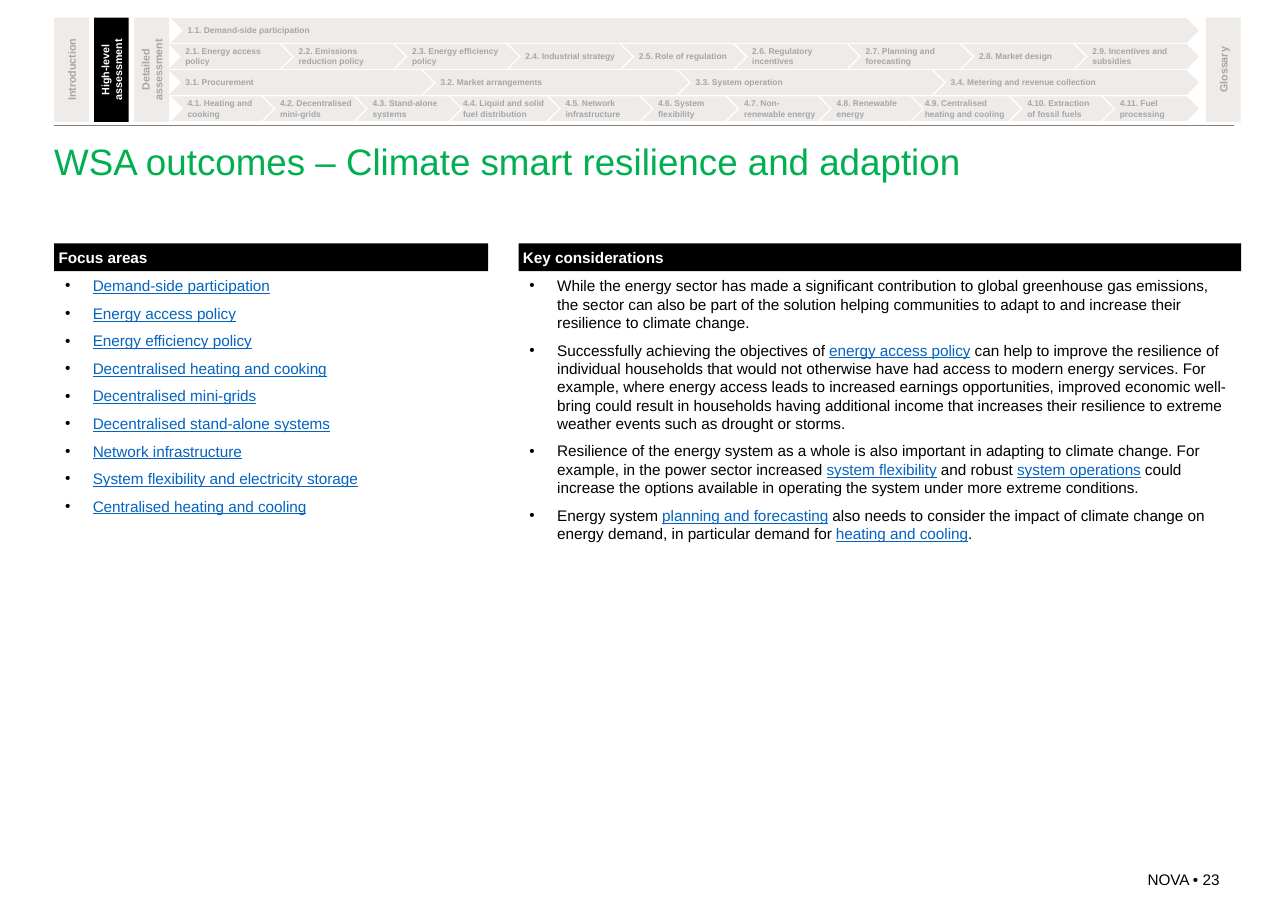
from lxml import etree
from pptx import Presentation
from pptx import util as u
from pptx.dml.color import RGBColor
from pptx.enum import shapes, text
from pptx.oxml import ns

HUES = {"pale": "EEEBE8", "grey": "A6A6A6", "rule": "808080", "black": "000000",
        "white": "FFFFFF", "green": "00B050", "link": "0563C1"}
FONT = "Arial"

# Each step: label, relative width, left and right inset in cm
def step(label, width=1, left=0.1, right=0.1):
    return label, width, left, right


# Each row: left edge in cm, steps
ROWS = [
    (3.94, [step("1.1. Demand-side participation")]),
    (3.89, [step(t) for t in (
        "2.1. Energy access policy", "2.2. Emissions reduction policy",
        "2.3. Energy efficiency policy", "2.4. Industrial strategy",
        "2.5. Role of regulation", "2.6. Regulatory incentives",
        "2.7. Planning and forecasting", "2.8. Market design",
        "2.9. Incentives and subsidies")]),
    (3.89, [step(t) for t in (
        "3.1. Procurement", "3.2. Market arrangements",
        "3.3. System operation", "3.4. Metering and revenue collection")]),
    (3.94, [
        step("4.1. Heating and cooking", 0.93),
        step("4.2. Decentralised mini-grids", 0.93, right=0),
        step("4.3. Stand-alone systems", 0.95),
        step("4.4. Liquid and solid fuel distribution", 0.98, 0, 0),
        step("4.5. Network infrastructure", 0.93),
        step("4.6. System flexibility", 0.87),
        step("4.7. Non-renewable energy", 0.93, right=0),
        step("4.8. Renewable energy", 0.93),
        step("4.9. Centralised heating and cooling", 0.98, 0, 0),
        step("4.10. Extraction of fossil fuels", 0.93),
        step("4.11. Fuel processing", 0.87)]),
]
TABS = [("Introduction", 1.25, False), ("High-level assessment", 2.17, True),
        ("Detailed assessment", 3.1, False), ("Glossary", 27.81, False)]

# Text between bars is styled as a link
FOCUS = ["|Demand-side participation|", "|Energy access policy|",
         "|Energy efficiency policy|", "|Decentralised heating and cooking|",
         "|Decentralised mini-grids|", "|Decentralised stand-alone systems|",
         "|Network infrastructure|", "|System flexibility and electricity storage|",
         "|Centralised heating and cooling|"]
KEY = [
    "While the energy sector has made a significant contribution to global greenhouse "
    "gas emissions, the sector can also be part of the solution helping communities to "
    "adapt to and increase their resilience to climate change.",
    "Successfully achieving the objectives of |energy access policy| can help to improve "
    "the resilience of individual households that would not otherwise have had access to "
    "modern energy services. For example, where energy access leads to increased earnings "
    "opportunities, improved economic well-bring could result in households having "
    "additional income that increases their resilience to extreme weather events such as "
    "drought or storms.",
    "Resilience of the energy system as a whole is also important in adapting to climate "
    "change. For example, in the power sector increased |system flexibility| and robust "
    "|system operations| could increase the options available in operating the system "
    "under more extreme conditions.",
    "Energy system |planning and forecasting| also needs to consider the impact of climate "
    "change on energy demand, in particular demand for |heating and cooling|.",
]


def hue(name):
    return RGBColor.from_string(HUES[name])


def place(box):
    return [u.Cm(v) for v in box]


def inset(frame, left, top, right, bottom):
    frame.margin_left, frame.margin_top = u.Cm(left), u.Cm(top)
    frame.margin_right, frame.margin_bottom = u.Cm(right), u.Cm(bottom)


def style(para, size, color, bold=False, align=text.PP_ALIGN.LEFT):
    para.alignment = align
    font = para.font
    font.name, font.size, font.bold = FONT, u.Pt(size), bold
    font.color.rgb = hue(color)


def block(slide, kind, box, fill, label, size, color, align=text.PP_ALIGN.LEFT):
    """Add a plain filled shape with one bold label."""
    shape = slide.shapes.add_shape(kind, *place(box))
    shape.shadow.inherit = False
    shape.fill.solid()
    shape.fill.fore_color.rgb = hue(fill)
    shape.line.fill.background()
    frame = shape.text_frame
    frame.word_wrap = True
    frame.vertical_anchor = text.MSO_ANCHOR.MIDDLE
    frame.text = label
    style(frame.paragraphs[0], size, color, True, align)
    return shape


def tab(slide, box, label, active):
    fill, color = ("black", "white") if active else ("pale", "grey")
    shape = block(slide, shapes.MSO_SHAPE.RECTANGLE, box, fill, label, 7, color,
                  text.PP_ALIGN.CENTER)
    shape.element.txBody.bodyPr.set("vert", "vert270")


def chain(slide, box, steps, lap=0.23):
    """Fill the box with chevrons that overlap by lap."""
    left, top, width, height = box
    unit = (width + lap * (len(steps) - 1)) / sum(s[1] for s in steps)
    for label, share, start, end in steps:
        shape = block(slide, shapes.MSO_SHAPE.CHEVRON, (left, top, unit * share, height),
                      "pale", label, 5.5, "grey")
        inset(shape.text_frame, start, 0.1, end, 0.1)
        left += unit * share - lap


def menu(slide, box):
    left, top, width, height = box
    for label, x, active in TABS:
        tab(slide, (x, top, 0.8, height), label, active)
    for i, (x, steps) in enumerate(ROWS):
        chain(slide, (x, top + 0.01 + 0.6 * i, 27.65 - x, 0.57), steps)
    y = u.Cm(top + height + 0.08)
    rule = slide.shapes.add_connector(shapes.MSO_CONNECTOR.STRAIGHT,
                                      u.Cm(left), y, u.Cm(left + width), y)
    rule.line.color.rgb = hue("rule")
    rule.line.width = u.Pt(0.75)
    etree.SubElement(rule.element.spPr, ns.qn("a:effectLst"))


def head(slide, box):
    title = slide.shapes.title
    title.left, title.top, title.width, title.height = place(box)
    frame = title.text_frame
    frame.text = "WSA outcomes – Climate smart resilience and adaption"
    frame.auto_size = text.MSO_AUTO_SIZE.NONE
    frame.vertical_anchor = text.MSO_ANCHOR.TOP
    inset(frame, 0, 0, 0, 0)
    style(frame.paragraphs[0], 24, "green")


def bullet(para):
    props = para._p.get_or_add_pPr()
    props.set("marL", str(u.Cm(0.64)))
    props.set("indent", str(-u.Cm(0.64)))
    tint = etree.SubElement(props, ns.qn("a:buClr"))
    etree.SubElement(tint, ns.qn("a:srgbClr"), val=HUES["black"])
    etree.SubElement(props, ns.qn("a:buFont"), typeface=FONT)
    etree.SubElement(props, ns.qn("a:buChar"), char="•")


def panel(slide, box, label, items):
    """Add a black heading bar with a bulleted list below it."""
    left, top, width, height = box
    bar = block(slide, shapes.MSO_SHAPE.RECTANGLE, (left, top, width, 0.64),
                "black", label, 10, "white")
    inset(bar.text_frame, 0.1, 0.1, 0, 0.1)
    body = slide.shapes.add_textbox(*place((left, top + 0.64, width, height - 0.64)))
    frame = body.text_frame
    frame.word_wrap = True
    for i, item in enumerate(items):
        para = frame.paragraphs[0] if i == 0 else frame.add_paragraph()
        bullet(para)
        style(para, 10, "black")
        para.line_spacing, para.space_after = u.Pt(12), u.Pt(6)
        for j, part in enumerate(item.split("|")):
            if part:
                run = para.add_run()
                run.text = part
                if j % 2:
                    run.font.underline = True
                    run.font.color.rgb = hue("link")


def foot(slide, box):
    frame = slide.shapes.add_textbox(*place(box)).text_frame
    frame.word_wrap = True
    inset(frame, 0, 0, 0, 0)
    frame.text = "NOVA • 23"
    style(frame.paragraphs[0], 10, "black", align=text.PP_ALIGN.RIGHT)


def main():
    deck = Presentation()
    deck.slide_width, deck.slide_height = u.Cm(29.7), u.Cm(21)
    slide = deck.slides.add_slide(deck.slide_layouts[5])
    menu(slide, (1.25, 0.41, 27.2, 2.4))
    head(slide, (1.25, 3.2, 27.2, 1.8))
    panel(slide, (1.25, 5.61, 10.01, 12.7), "Focus areas", FOCUS)
    panel(slide, (11.96, 5.61, 16.66, 12.7), "Key considerations", KEY)
    foot(slide, (24.03, 20.07, 4.09, 0.43))
    deck.save("out.pptx")


if __name__ == "__main__":
    main()
